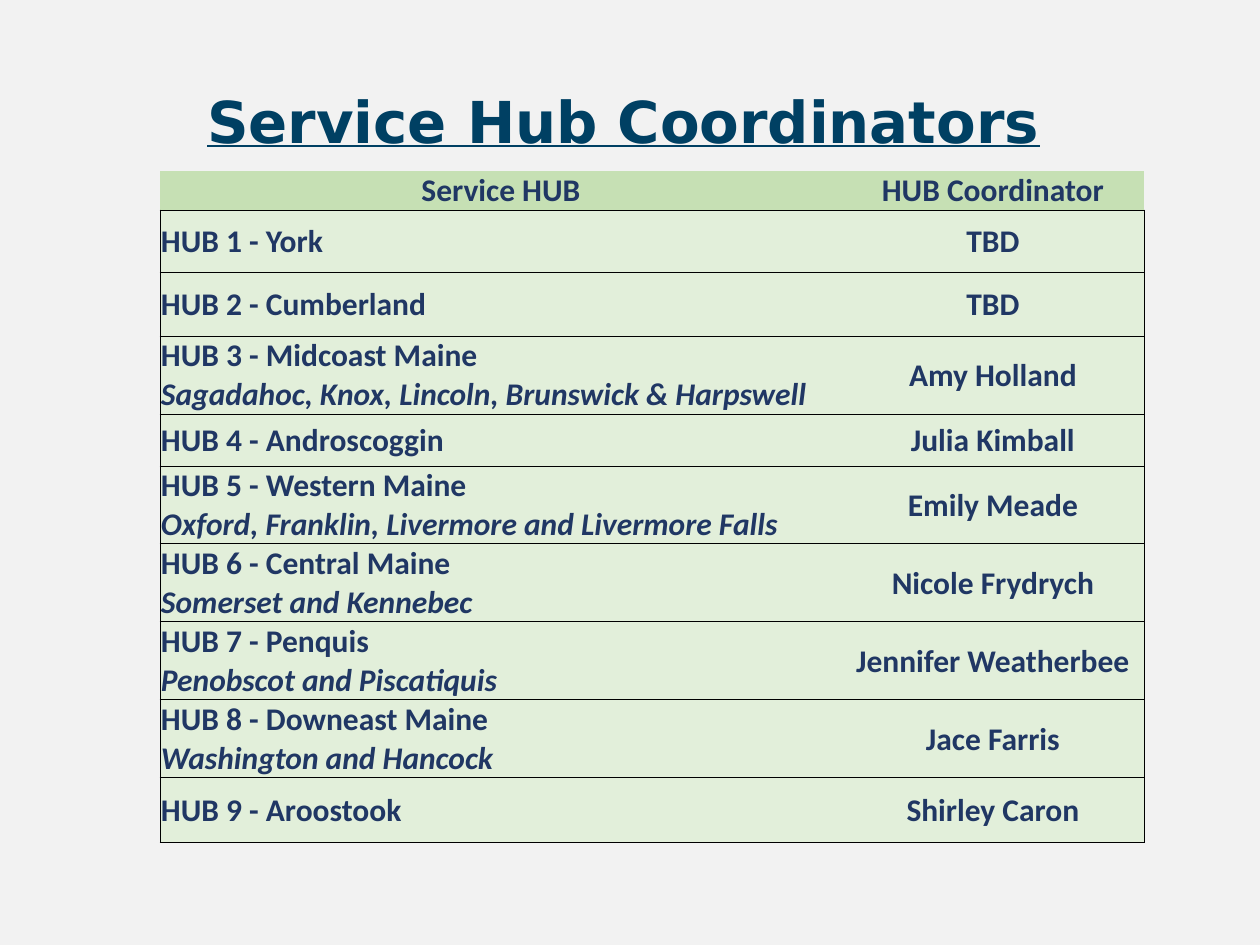
"""Build the service hub coordinators slide."""
from pptx import Presentation, util as u
from pptx.dml.color import RGBColor
from pptx.enum import text
from pptx.oxml.ns import qn
from lxml import etree

HEADS = ("Service HUB", "HUB Coordinator")
HUBS = [
    ("HUB 1 - York", "", "TBD", 62),
    ("HUB 2 - Cumberland", "", "TBD", 64),
    ("HUB 3 - Midcoast Maine", "Sagadahoc, Knox, Lincoln, Brunswick & Harpswell", "Amy Holland", 39),
    ("HUB 4 - Androscoggin", "", "Julia Kimball", 52),
    ("HUB 5 - Western Maine", "Oxford, Franklin, Livermore and Livermore Falls", "Emily Meade", 39),
    ("HUB 6 - Central Maine", "Somerset and Kennebec", "Nicole Frydrych", 39),
    ("HUB 7 - Penquis", "Penobscot and Piscatiquis", "Jennifer Weatherbee", 39),
    ("HUB 8 - Downeast Maine", "Washington and Hancock", "Jace Farris", 39),
    ("HUB 9 - Aroostook", "", "Shirley Caron", 65),
]
LINE = 39
COLS = (682, 302)
PAPER = RGBColor(0xF2, 0xF2, 0xF2)
TEAL = RGBColor(0x00, 0x40, 0x63)
NAVY = RGBColor(0x20, 0x37, 0x64)
GREEN = RGBColor(0xC6, 0xE0, 0xB4)
PALE = RGBColor(0xE2, 0xEF, 0xDA)
BLACK = RGBColor(0, 0, 0)
MID, LOW = text.MSO_ANCHOR.MIDDLE, text.MSO_ANCHOR.BOTTOM


def px(n):
    return u.Emu(round(n * 914400 / 126))


def write(para, words, face, size, color, center=True):
    para.alignment = text.PP_ALIGN.CENTER if center else text.PP_ALIGN.LEFT
    run = para.add_run()
    run.text = words
    font = run.font
    font.name, font.size, font.bold = face, u.Pt(size), True
    font.color.rgb = color
    return font


def edge(cell, sides):
    props = cell._tc.get_or_add_tcPr()
    for spot, side in enumerate("LRTB"):
        line = etree.Element(qn("a:ln" + side), w=str(u.Pt(0.5)))
        if side in sides:
            fill = etree.SubElement(line, qn("a:solidFill"))
            etree.SubElement(fill, qn("a:srgbClr"), val=str(BLACK))
        else:
            etree.SubElement(line, qn("a:noFill"))
        props.insert(spot, line)


def dress(cell, words, fill, sides, center=True, anchor=MID, slant=False):
    cell.margin_left = cell.margin_right = cell.margin_top = px(1)
    cell.margin_bottom = 0
    cell.vertical_anchor = anchor
    cell.fill.solid()
    cell.fill.fore_color.rgb = fill
    edge(cell, sides)
    if words:
        font = write(cell.text_frame.paragraphs[0], words, "Calibri", 18, NAVY, center)
        font.italic = slant


def main():
    deck = Presentation()
    deck.slide_width, deck.slide_height = px(1260), px(945)
    slide = deck.slides.add_slide(deck.slide_layouts[6])
    slide.background.fill.solid()
    slide.background.fill.fore_color.rgb = PAPER

    box = slide.shapes.add_textbox(px(11), px(52), px(1225), px(146)).text_frame
    box.word_wrap, box.vertical_anchor = True, MID
    title = box.paragraphs[0]
    title.line_spacing = 0.9
    write(title, "Service Hub Coordinators", "DejaVu Sans", 33, TEAL).underline = True

    highs = [LINE]
    for _, towns, _, high in HUBS:
        highs += [high, LINE] if towns else [high]
    grid = slide.shapes.add_table(
        len(highs), 2, px(160), px(171), px(sum(COLS)), px(sum(highs))).table
    grid.first_row = grid.horz_banding = False
    for col, wide in zip(grid.columns, COLS):
        col.width = px(wide)
    for row, high in zip(grid.rows, highs):
        row.height = px(high)

    for i, head in enumerate(HEADS):
        dress(grid.cell(0, i), head, GREEN, "B", anchor=LOW)
    at = 1
    for hub, towns, lead, _ in HUBS:
        dress(grid.cell(at, 0), hub, PALE, "LT" if towns else "LTB", center=False)
        dress(grid.cell(at, 1), lead, PALE, "RTB")
        if towns:
            dress(grid.cell(at + 1, 0), towns, PALE, "LB", center=False, slant=True)
            dress(grid.cell(at + 1, 1), "", PALE, "RB")
            grid.cell(at, 1).merge(grid.cell(at + 1, 1))
        at += 2 if towns else 1
    deck.save("out.pptx")


if __name__ == "__main__":
    main()
